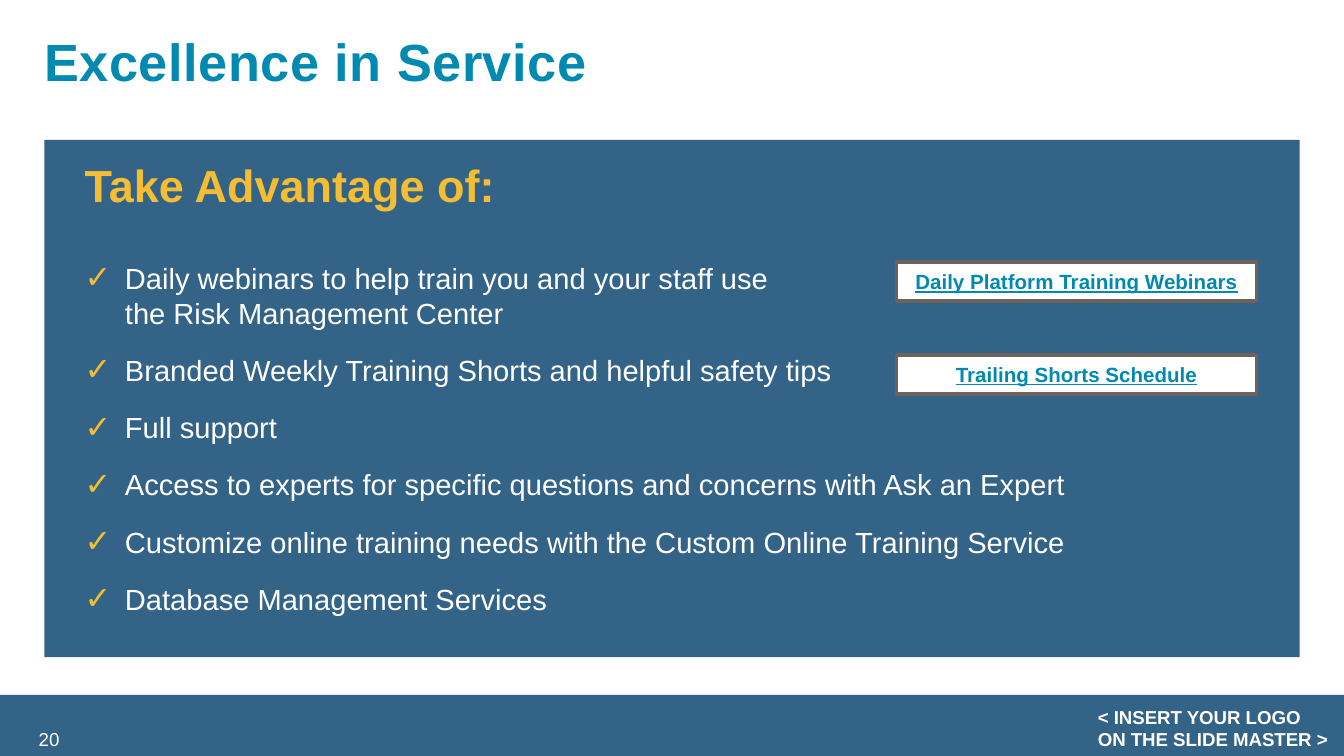
from lxml import etree
from pptx import Presentation
from pptx.dml.color import RGBColor
from pptx.enum import shapes, text
from pptx.oxml import ns
from pptx.util import Inches, Pt

HUES = {"navy": "003D69", "teal": "008AB1", "gold": "F4BD33",
        "white": "FFFFFF", "brown": "6A625B"}


def write(para, words, size, hue, bold=False):
    run = para.add_run()
    run.text = words
    run.font.name = "Arial"
    run.font.size = Pt(size)
    run.font.bold = bold
    run.font.color.rgb = RGBColor.from_string(HUES[hue])
    return run


def tint(shape):
    """Fill with navy at 80 % opacity."""
    shape.fill.solid()
    shape.fill.fore_color.rgb = RGBColor.from_string(HUES["navy"])
    clr = shape.fill._xPr.find(".//" + ns.qn("a:srgbClr"))
    etree.SubElement(clr, ns.qn("a:alpha"), val="80000")


deck = Presentation()
deck.slide_width, deck.slide_height = Inches(10), Inches(10) * 9 // 16
slide = deck.slides.add_slide(deck.slide_layouts[1])
title, body = slide.placeholders

# Footer
band = slide.shapes.add_shape(shapes.MSO_SHAPE.RECTANGLE, 0, Inches(5.17),
                              Inches(10), Inches(0.46))
band.shadow.inherit = False
band.line.fill.background()
tint(band)

page = slide.shapes.add_textbox(Inches(0.12), Inches(5.35), Inches(0.42), Inches(0.3))
page.text_frame.word_wrap = True
page.text_frame.vertical_anchor = text.MSO_ANCHOR.MIDDLE
para = page.text_frame.paragraphs[0]
para.alignment = text.PP_ALIGN.RIGHT
write(para, "20", 10, "white")

note = slide.shapes.add_textbox(Inches(8.07), Inches(5.2), Inches(1.93), Inches(0.44))
note.text_frame.word_wrap = True
para = note.text_frame.paragraphs[0]
para.alignment = text.PP_ALIGN.LEFT
write(para, "< INSERT YOUR LOGO ON THE SLIDE MASTER >", 10, "white", True)

# Title
title.left, title.top = Inches(0.33), Inches(0.22)
title.width, title.height = Inches(9.33), Inches(0.73)
frame = title.text_frame
frame.margin_left = frame.margin_right = frame.margin_top = frame.margin_bottom = 0
frame.vertical_anchor = text.MSO_ANCHOR.TOP
frame.auto_size = text.MSO_AUTO_SIZE.NONE
para = frame.paragraphs[0]
para.alignment = text.PP_ALIGN.LEFT
run = write(para, "Excellence in Service", 28, "teal", True)
run.font._element.set("spc", "30")

# Panel with heading and checklist
body.left, body.top = Inches(0.33), Inches(1.04)
body.width, body.height = Inches(9.34), Inches(3.85)
tint(body)
frame = body.text_frame
frame.margin_left, frame.margin_right = Inches(0.3), Inches(0.1)
frame.margin_top = frame.margin_bottom = Inches(0.2)
frame.vertical_anchor = text.MSO_ANCHOR.TOP
frame.auto_size = text.MSO_AUTO_SIZE.NONE

head = frame.paragraphs[0]
head.line_spacing, head.space_before = Pt(24), Pt(10)
props = head._p.get_or_add_pPr()
props.set("marL", "0")
props.set("indent", "0")
etree.SubElement(props, ns.qn("a:buNone"))
write(head, "Take Advantage of:", 24.1, "gold", True)

# Each item: space before, left margin, text; only the wrapped line has no tick
items = [
    (26, 0.3, "Daily webinars to help train you and your staff use"),
    (0, 0.6, "the Risk Management Center"),
    (12, 0.3, "Branded Weekly Training Shorts and helpful safety tips"),
    (12, 0.3, "Full support"),
    (12, 0.3, "Access to experts for specific questions and concerns with Ask an Expert"),
    (12, 0.3, "Customize online training needs with the Custom Online Training Service"),
    (12, 0.3, "Database Management Services"),
]
for gap, left, words in items:
    para = frame.add_paragraph()
    para.level = 1
    para.line_spacing = 1.0
    para.space_before = Pt(gap)
    props = para._p.get_or_add_pPr()
    props.set("marL", str(Inches(left)))
    props.set("indent", str(Inches(-0.3)))
    if gap:
        clr = etree.SubElement(props, ns.qn("a:buClr"))
        etree.SubElement(clr, ns.qn("a:srgbClr"), val=HUES["gold"])
        etree.SubElement(props, ns.qn("a:buSzPct"), val="110000")
        etree.SubElement(props, ns.qn("a:buFont"), typeface="Arial")
        etree.SubElement(props, ns.qn("a:buChar"), char="✓")
    else:
        etree.SubElement(props, ns.qn("a:buNone"))
    write(para, words, 15.6, "white")

# Buttons
for top, label in [(2.64, "Trailing Shorts Schedule"),
                   (1.95, "Daily Platform Training Webinars")]:
    button = slide.shapes.add_shape(shapes.MSO_SHAPE.RECTANGLE, Inches(6.67),
                                    Inches(top), Inches(2.68), Inches(0.29))
    button.shadow.inherit = False
    button.fill.solid()
    button.fill.fore_color.rgb = RGBColor.from_string(HUES["white"])
    button.line.color.rgb = RGBColor.from_string(HUES["brown"])
    button.line.width = Pt(2)
    button.text_frame.vertical_anchor = text.MSO_ANCHOR.MIDDLE
    para = button.text_frame.paragraphs[0]
    para.alignment = text.PP_ALIGN.CENTER
    write(para, label, 11, "teal", True).font.underline = True

deck.save("out.pptx")
